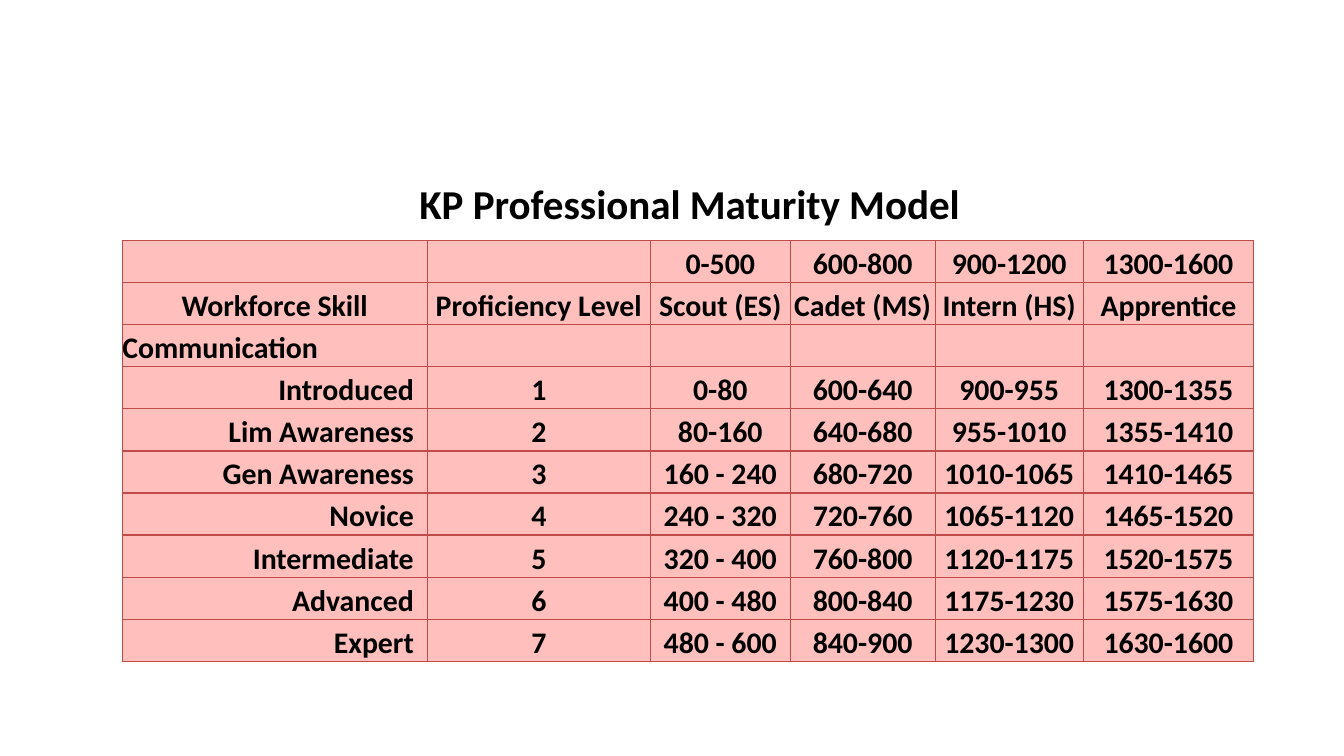
"""Build the professional maturity model slide."""
from lxml import etree
from pptx import Presentation
from pptx.dml.color import RGBColor
from pptx.enum.text import MSO_ANCHOR, MSO_AUTO_SIZE, PP_ALIGN
from pptx.oxml.ns import qn
from pptx.util import Inches, Pt

LEFT, CENTER, RIGHT = PP_ALIGN.LEFT, PP_ALIGN.CENTER, PP_ALIGN.RIGHT
TOP, BOTTOM = MSO_ANCHOR.TOP, MSO_ANCHOR.BOTTOM
FIXED_SIZE = MSO_AUTO_SIZE.NONE
FONT = "Calibri"
BLACK, PINK, RED = "000000", "FFBFBD", "BF4C48"
COLUMN_WIDTHS = [2.27, 1.66, 1.04, 1.08, 1.1, 1.27]
TABLE_HEIGHT = Inches(3.13)
ROWS = [
    ["", "", "0-500", "600-800", "900-1200", "1300-1600"],
    ["Workforce Skill", "Proficiency Level", "Scout (ES)", "Cadet (MS)", "Intern (HS)", "Apprentice"],
    ["Communication", "", "", "", "", ""],
    ["Introduced", "1", "0-80", "600-640", "900-955", "1300-1355"],
    ["Lim Awareness", "2", "80-160", "640-680", "955-1010", "1355-1410"],
    ["Gen Awareness", "3", "160 - 240", "680-720", "1010-1065", "1410-1465"],
    ["Novice", "4", "240 - 320", "720-760", "1065-1120", "1465-1520"],
    ["Intermediate", "5", "320 - 400", "760-800", "1120-1175", "1520-1575"],
    ["Advanced", "6", "400 - 480", "800-840", "1175-1230", "1575-1630"],
    ["Expert", "7", "480 - 600", "840-900", "1230-1300", "1630-1600"],
]


def color(value):
    return RGBColor.from_string(value)


def write(frame, text, size=16, align=CENTER):
    para = frame.paragraphs[0]
    para.alignment = align
    span = para.add_run()
    span.text = text
    span.font.name = FONT
    span.font.size = Pt(size)
    span.font.bold = True
    span.font.color.rgb = color(BLACK)


deck = Presentation()
deck.slide_width = Inches(10)
deck.slide_height = deck.slide_width * 9 // 16
page = deck.slides.add_slide(deck.slide_layouts[5])

title = page.shapes.title
title.left, title.top = Inches(3.02), Inches(1.28)
title.width, title.height = Inches(4.35), Inches(0.47)
title.text_frame.word_wrap = True
title.text_frame.auto_size = FIXED_SIZE
title.text_frame.vertical_anchor = TOP
write(title.text_frame, "KP Professional Maturity Model", size=22, align=LEFT)

table = page.shapes.add_table(
    len(ROWS), len(COLUMN_WIDTHS), Inches(0.91), Inches(1.79),
    Inches(sum(COLUMN_WIDTHS)), TABLE_HEIGHT,
).table
table.first_row = False
table.horz_banding = False
for column, width in zip(table.columns, COLUMN_WIDTHS):
    column.width = Inches(width)

for row_index, values in enumerate(ROWS):
    table.rows[row_index].height = TABLE_HEIGHT // len(ROWS)
    for column_index, value in enumerate(values):
        cell = table.cell(row_index, column_index)
        is_level = column_index == 0 and row_index > 2
        cell.margin_left = cell.margin_top = cell.margin_bottom = 0
        cell.margin_right = Inches(0.1 if is_level else 0)
        cell.vertical_anchor = BOTTOM
        properties = cell._tc.get_or_add_tcPr()
        for side in ("a:lnL", "a:lnR", "a:lnT", "a:lnB"):
            line = etree.SubElement(properties, qn(side), w=str(Pt(0.75)))
            fill = etree.SubElement(line, qn("a:solidFill"))
            etree.SubElement(fill, qn("a:srgbClr"), val=RED)
        cell.fill.solid()
        cell.fill.fore_color.rgb = color(PINK)
        if value:
            align = RIGHT if is_level else LEFT if value == "Communication" else CENTER
            write(cell.text_frame, value, align=align)

deck.save("out.pptx")
